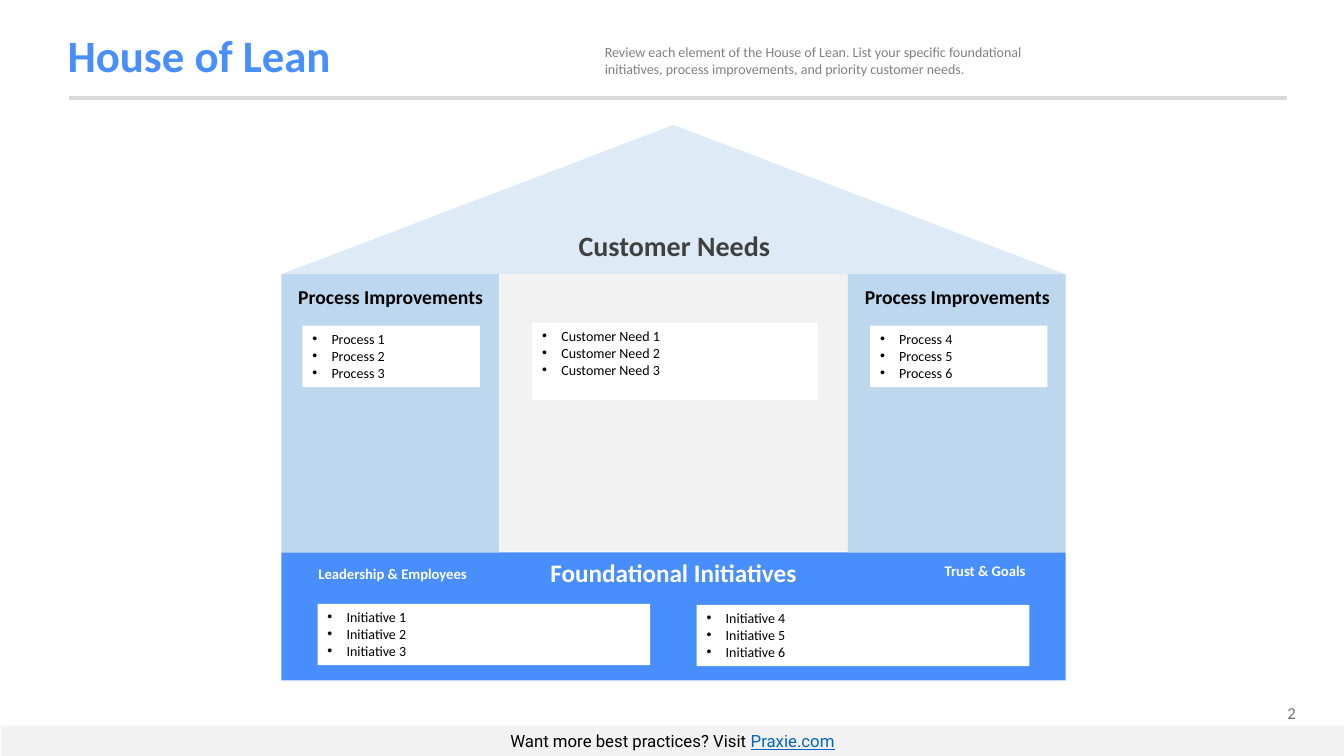
import pptx
import pptx.util
import pptx.dml.color
import pptx.enum.shapes
import pptx.enum.text
import pptx.oxml.ns
import lxml.etree

Inches = pptx.util.Inches
RGBColor = pptx.dml.color.RGBColor
SHAPE = pptx.enum.shapes.MSO_SHAPE
ALIGN = pptx.enum.text.PP_ALIGN
ANCHOR = pptx.enum.text.MSO_ANCHOR
qn = pptx.oxml.ns.qn

BLUE = RGBColor(0x48, 0x8E, 0xFD)
WALL = RGBColor(0xBD, 0xD7, 0xEE)
ROOF = RGBColor(0xDE, 0xEB, 0xF7)
PALE = RGBColor(0xF2, 0xF2, 0xF2)
RULE = RGBColor(0xD9, 0xD9, 0xD9)
WHITE = RGBColor(0xFF, 0xFF, 0xFF)
BLACK = RGBColor(0, 0, 0)
DARK = RGBColor(0x40, 0x40, 0x40)
GRAY = RGBColor(0x80, 0x80, 0x80)
PAGE = RGBColor(0x76, 0x71, 0x71)
LINK = RGBColor(0x05, 0x63, 0xC1)

deck = pptx.Presentation()
deck.slide_width = Inches(13.33)
deck.slide_height = Inches(7.5)
slide = deck.slides.add_slide(deck.slide_layouts[5])
shapes = slide.shapes


def block(kind, area, fill):
    """Add a filled shape without line or shadow."""
    shape = shapes.add_shape(kind, *map(Inches, area))
    shape.shadow.inherit = False
    shape.fill.solid()
    shape.fill.fore_color.rgb = fill
    shape.line.fill.background()
    return shape


def style(font, size, color, **format):
    """Set size, colour and any further font values."""
    font.color.rgb = color
    values = {"name": "Calibri", "size": pptx.util.Pt(size), **format}
    for key, value in values.items():
        setattr(font, key, value)


# Title and rule
title = shapes.title
place = {"left": 0.57, "top": 0.19, "width": 5.07, "height": 0.77}
for key, value in place.items():
    setattr(title, key, Inches(value))
title.text_frame.text = "House of Lean"
title.text_frame.vertical_anchor = ANCHOR.MIDDLE
head = title.text_frame.paragraphs[0]
head.alignment = ALIGN.LEFT
head.line_spacing = 0.9
style(head.runs[0].font, 32, BLUE, bold=True)

rule = shapes.add_connector(
    pptx.enum.shapes.MSO_CONNECTOR.STRAIGHT,
    Inches(0.68), Inches(0.97), Inches(12.76), Inches(0.97))
rule.line.color.rgb = RULE
rule.line.width = pptx.util.Pt(3)
lxml.etree.SubElement(rule.element.spPr, qn("a:effectLst"))

# House: room, base, walls and roof
block(SHAPE.RECTANGLE, (4.96, 2.71, 3.46, 2.76), PALE)
block(SHAPE.RECTANGLE, (2.79, 5.48, 7.78, 1.27), BLUE)
for left in (2.79, 8.41):
    block(SHAPE.RECTANGLE, (left, 2.72, 2.16, 2.76), WALL)
roof = block(SHAPE.ISOSCELES_TRIANGLE, (2.79, 1.24, 7.78, 1.48), ROOF)
roof.adjustments[0] = 0.5

# White cards with bullet lists
cards = [
    ((3, 3.23, 1.76, 0.61), "Process", 1),
    ((8.63, 3.23, 1.76, 0.61), "Process", 4),
    ((5.28, 3.2, 2.83, 0.77), "Customer Need", 1),
    ((3.15, 5.99, 3.3, 0.61), "Initiative", 1),
    ((6.91, 6, 3.3, 0.61), "Initiative", 4),
]
for area, name, first in cards:
    frame = block(SHAPE.RECTANGLE, area, WHITE).text_frame
    frame.vertical_anchor = ANCHOR.TOP
    frame.text = "\n".join(f"{name} {first + i}" for i in range(3))
    for para in frame.paragraphs:
        para.alignment = ALIGN.LEFT
        props = para._p.get_or_add_pPr()
        props.set("marL", str(Inches(0.19)))
        props.set("indent", str(-Inches(0.19)))
        face = lxml.etree.SubElement(props, qn("a:buFont"))
        face.set("typeface", "Arial")
        lxml.etree.SubElement(props, qn("a:buChar")).set("char", "•")
        style(para.font, 10, BLACK)
        style(para.runs[0].font, 10, BLACK)

# Labels: area, text, size, colour, bold, wrap, alignment
guide = ("Review each element of the House of Lean. List your specific "
         "foundational initiatives, process improvements, and priority "
         "customer needs.")
labels = [
    ((5.64, 2.22, 2.12, 0.44), "Customer Needs", 20, DARK, True, False, ALIGN.LEFT),
    ((2.85, 2.78, 2.05, 0.34), "Process Improvements", 14, BLACK, True, False, ALIGN.CENTER),
    ((8.47, 2.78, 2.05, 0.34), "Process Improvements", 14, BLACK, True, False, ALIGN.CENTER),
    ((5.36, 5.48, 2.67, 0.4), "Foundational Initiatives", 18, WHITE, True, False, ALIGN.LEFT),
    ((3.06, 5.55, 1.7, 0.28), "Leadership & Employees", 10.5, WHITE, True, False, ALIGN.LEFT),
    ((9.27, 5.52, 1.03, 0.28), "Trust & Goals", 10.5, WHITE, True, False, ALIGN.LEFT),
    ((5.9, 0.38, 4.49, 0.44), guide, 10, GRAY, False, True, ALIGN.LEFT),
    ((11.93, 6.92, 1.02, 0.3), "2", 12, PAGE, False, True, ALIGN.RIGHT),
]
for area, text, size, color, bold, wrap, align in labels:
    frame = shapes.add_textbox(*map(Inches, area)).text_frame
    frame.word_wrap = wrap
    frame.text = text
    para = frame.paragraphs[0]
    para.alignment = align
    style(para.runs[0].font, size, color, bold=bold)

# Footer band
foot = block(SHAPE.RECTANGLE, (0.01, 7.2, 13.32, 0.3), PALE)
foot.text_frame.vertical_anchor = ANCHOR.MIDDLE
para = foot.text_frame.paragraphs[0]
para.alignment = ALIGN.CENTER
for text, color, under in (("Want more best practices? Visit ", BLACK, False),
                           ("Praxie.com", LINK, True)):
    run = para.add_run()
    run.text = text
    style(run.font, 12, color, name="Roboto", underline=under)

deck.save("out.pptx")
